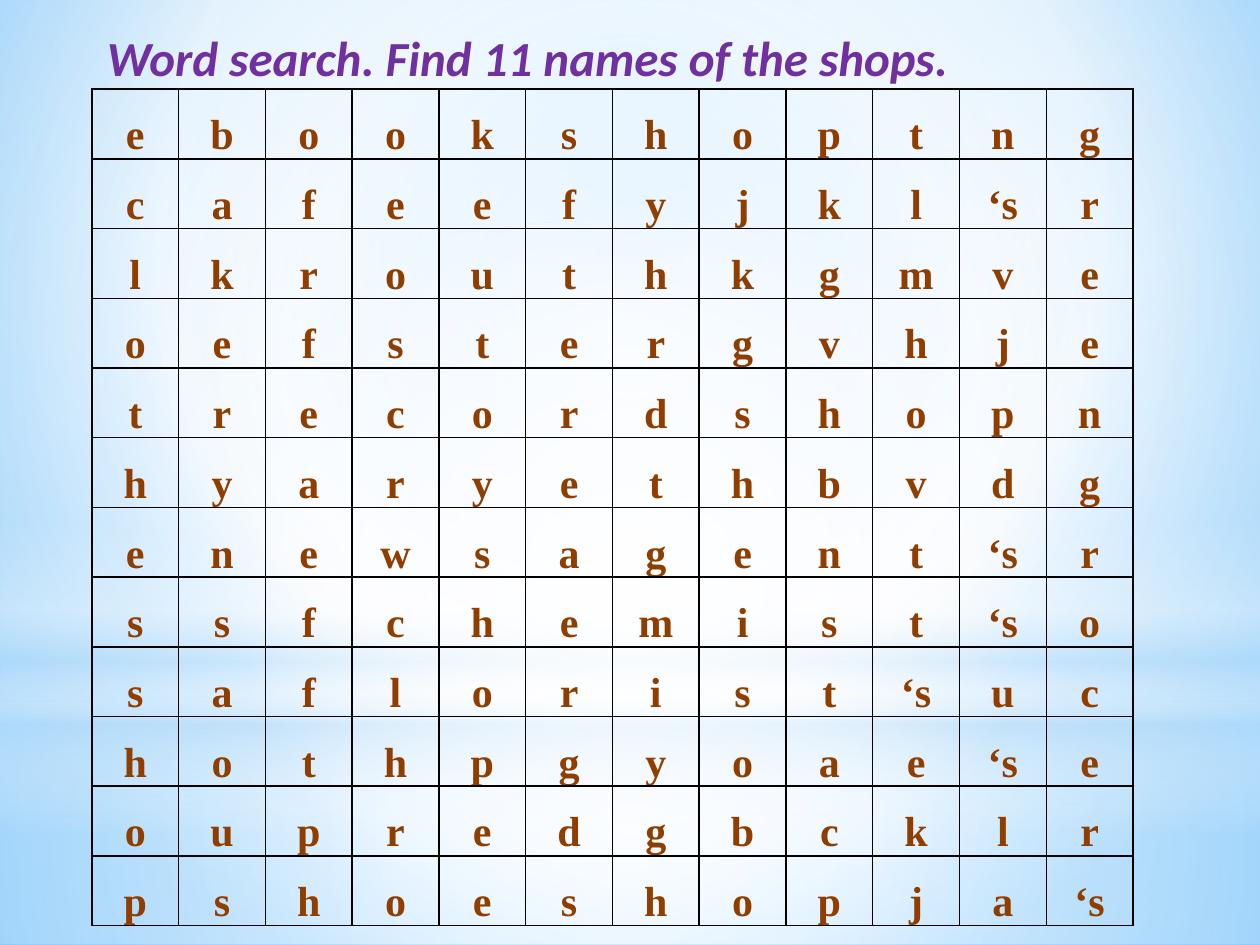
from dataclasses import dataclass

import pptx
import pptx.dml.color
import pptx.enum.shapes
import pptx.enum.text
import pptx.oxml
import pptx.oxml.ns
import pptx.slide
import pptx.table
import pptx.text.text
import pptx.util

Pt = pptx.util.Pt
SHAPES = pptx.enum.shapes.MSO_SHAPE

COLORS = {
    "white": "FFFFFF",
    "pale": "B4DCFA",
    "sky": "9ED5FF",
    "blue": "5BB9FF",
    "letter": "903E00",
    "title": "7030A0",
    "border": "000000",
}

WIDTH, HEIGHT = 720, 540
HORIZON = 402
TABLE_LEFT, TABLE_TOP = 52.5, 51
COLUMN_WIDTH, ROW_HEIGHT = 49.6, 39.5

LETTER_ROWS = [
    "e b o o k s h o p t n g",
    "c a f e e f y j k l ‘s r",
    "l k r o u t h k g m v e",
    "o e f s t e r g v h j e",
    "t r e c o r d s h o p n",
    "h y a r y e t h b v d g",
    "e n e w s a g e n t ‘s r",
    "s s f c h e m i s t ‘s o",
    "s a f l o r i s t ‘s u c",
    "h o t h p g y o a e ‘s e",
    "o u p r e d g b c k l r",
    "p s h o e s h o p j a ‘s",
]


@dataclass(frozen=True)
class Stop:
    """A gradient stop; position and opacity are percentages."""
    position: int
    color: str
    opacity: int = 100


@dataclass(frozen=True)
class Gradient:
    """Radial towards focus (left, top, right, bottom), or linear if focus is None."""
    stops: tuple[Stop, ...]
    focus: tuple[int, int, int, int] | None = (50, 50, 50, 50)
    angle: int = 90


@dataclass(frozen=True)
class Glow:
    shape: SHAPES
    top: float
    height: float
    gradient: Gradient


@dataclass(frozen=True)
class TextStyle:
    font: str
    size: float
    color: str
    italic: bool = False


BACKDROP = Gradient(
    (Stop(0, "sky"), Stop(60, "white"), Stop(100, "blue")), (20, 10, 20, 60))

GLOWS = [
    Glow(SHAPES.RECTANGLE, HORIZON, HEIGHT - HORIZON, Gradient(
        (Stop(0, "white", 91), Stop(37, "white", 76), Stop(100, "pale", 79)))),
    Glow(SHAPES.RECTANGLE, 0, HORIZON, Gradient(
        (Stop(0, "white", 89), Stop(48, "white", 62), Stop(100, "pale", 79)))),
    Glow(SHAPES.RECTANGLE, 297, 180, Gradient(
        (Stop(0, "white", 0), Stop(29, "white", 30), Stop(45, "pale", 40),
         Stop(55, "white", 26), Stop(65, "pale", 60), Stop(100, "white", 0)),
        focus=None)),
    Glow(SHAPES.OVAL, 126, HORIZON, Gradient(
        (Stop(0, "white"), Stop(56, "white", 0)))),
]

TITLE_STYLE = TextStyle("Calibri", 28, "title", italic=True)
LETTER_STYLE = TextStyle("Times New Roman", 24, "letter")


def gradient_element(gradient: Gradient):
    stops = "".join(
        f'<a:gs pos="{stop.position * 1000}"><a:srgbClr val="{COLORS[stop.color]}">'
        f'<a:alpha val="{stop.opacity * 1000}"/></a:srgbClr></a:gs>'
        for stop in gradient.stops)
    if gradient.focus is None:
        direction = f'<a:lin ang="{gradient.angle * 60000}" scaled="0"/>'
    else:
        sides = " ".join(f'{side}="{value * 1000}"'
                         for side, value in zip("ltrb", gradient.focus))
        direction = f'<a:path path="circle"><a:fillToRect {sides}/></a:path>'
    return pptx.oxml.parse_xml(
        f'<a:gradFill {pptx.oxml.ns.nsdecls("a")} rotWithShape="1">'
        f'<a:gsLst>{stops}</a:gsLst>{direction}</a:gradFill>')


def apply_gradient(properties, gradient: Gradient) -> None:
    """Replace the empty fill in a properties element by the gradient."""
    empty_fill = properties.find(pptx.oxml.ns.qn("a:noFill"))
    properties.replace(empty_fill, gradient_element(gradient))


def paint_backdrop(page: pptx.slide.Slide) -> None:
    page.background.fill.background()
    properties = page.element.find(".//" + pptx.oxml.ns.qn("p:bgPr"))
    apply_gradient(properties, BACKDROP)


def draw_glow(page: pptx.slide.Slide, glow: Glow) -> None:
    shape = page.shapes.add_shape(
        glow.shape, Pt(0), Pt(glow.top), Pt(WIDTH), Pt(glow.height))
    shape.shadow.inherit = False
    shape.line.fill.background()
    shape.fill.background()
    apply_gradient(shape.element.spPr, glow.gradient)


def add_span(para, text: str, style: TextStyle) -> None:
    span = para.add_run()
    span.text = text
    span.font.name = style.font
    span.font.size = Pt(style.size)
    span.font.bold = True
    span.font.italic = style.italic
    span.font.color.rgb = pptx.dml.color.RGBColor.from_string(COLORS[style.color])


def add_borders(cell) -> None:
    properties = cell._tc.get_or_add_tcPr()
    for index, side in enumerate("LRTB"):
        properties.insert(index, pptx.oxml.parse_xml(
            f'<a:ln{side} {pptx.oxml.ns.nsdecls("a")} w="{Pt(1)}"><a:solidFill>'
            f'<a:srgbClr val="{COLORS["border"]}"/></a:solidFill></a:ln{side}>'))


def fill_cell(cell, letter: str) -> None:
    cell.fill.background()
    cell.margin_left = cell.margin_right = Pt(5)
    cell.margin_top = cell.margin_bottom = Pt(0)
    add_borders(cell)
    para = cell.text_frame.paragraphs[0]
    para.alignment = pptx.enum.text.PP_ALIGN.CENTER
    para.line_spacing = 1.5
    add_span(para, letter, LETTER_STYLE)


def draw_letter_grid(page: pptx.slide.Slide) -> None:
    letters = [row.split() for row in LETTER_ROWS]
    row_count, column_count = len(letters), len(letters[0])
    table = page.shapes.add_table(
        row_count, column_count, Pt(TABLE_LEFT), Pt(TABLE_TOP),
        Pt(COLUMN_WIDTH * column_count), Pt(ROW_HEIGHT * row_count)).table
    table.first_row = table.horz_banding = False
    for column in table.columns:
        column.width = Pt(COLUMN_WIDTH)
    for row, row_letters in zip(table.rows, letters):
        row.height = Pt(ROW_HEIGHT)
        for cell, letter in zip(row.cells, row_letters):
            fill_cell(cell, letter)


def draw_title(page: pptx.slide.Slide) -> None:
    box = page.shapes.add_textbox(Pt(54), Pt(12.25), Pt(499), Pt(41))
    frame = box.text_frame
    frame.word_wrap = True
    frame.auto_size = pptx.enum.text.MSO_AUTO_SIZE.SHAPE_TO_FIT_TEXT
    frame.vertical_anchor = pptx.enum.text.MSO_ANCHOR.MIDDLE
    add_span(frame.paragraphs[0], "Word search. Find 11 names of the shops.", TITLE_STYLE)


def main() -> None:
    deck = pptx.Presentation()
    deck.slide_width, deck.slide_height = Pt(WIDTH), Pt(HEIGHT)
    page = deck.slides.add_slide(deck.slide_layouts[6])
    paint_backdrop(page)
    for glow in GLOWS:
        draw_glow(page, glow)
    draw_letter_grid(page)
    draw_title(page)
    deck.save("out.pptx")


if __name__ == "__main__":
    main()
